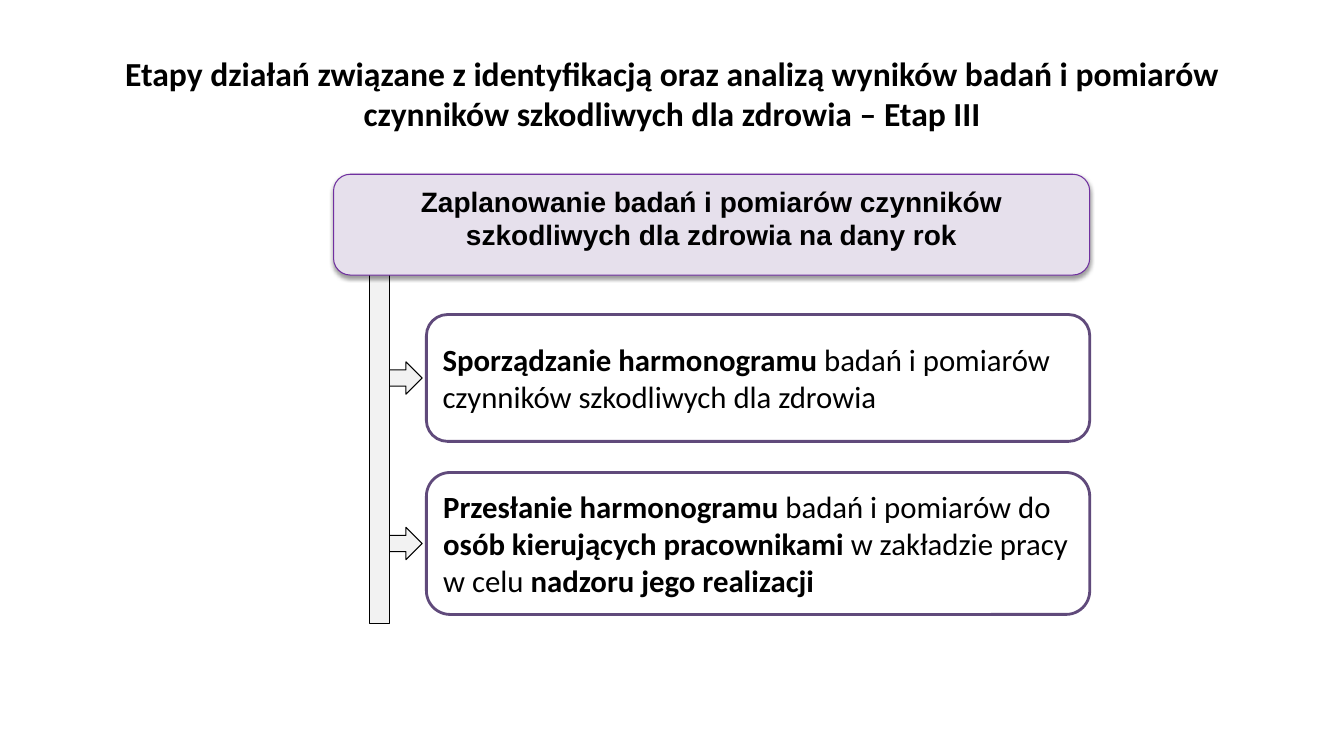
from collections import namedtuple
from dataclasses import dataclass

import lxml.etree
import pptx
import pptx.dml.color
import pptx.enum.shapes
import pptx.enum.text
import pptx.oxml.ns
import pptx.util

SHAPE = pptx.enum.shapes.MSO_SHAPE
ALIGN = pptx.enum.text.PP_ALIGN
ANCHOR = pptx.enum.text.MSO_ANCHOR

CELL = 7.5 / 18  # the slide is a grid of 32 columns and 18 rows
Box = namedtuple("Box", "x y w h")


@dataclass(frozen=True)
class Theme:
    text: str = "000000"
    paper: str = "FFFFFF"
    guide_fill: str = "F2F2F2"
    header_fill: str = "E6E0EC"
    header_line: str = "7030A0"
    step_line: str = "604A7B"
    body_font: str = "Calibri"
    header_font: str = "Arial"
    title_size: int = 24
    header_size: int = 20
    step_size: int = 22
    thin: float = 0.75
    thick: float = 2


THEME = Theme()
TITLE = ("Etapy działań związane z identyfikacją oraz analizą wyników badań "
         "i pomiarów czynników szkodliwych dla zdrowia – Etap III")
HEADER = "Zaplanowanie badań i pomiarów czynników szkodliwych dla zdrowia na dany rok"
# Each step: top and height in rows below the flow's top, then (text, bold) runs
STEPS = [
    (3.34, 3.02, [("Sporządzanie harmonogramu ", True),
                  ("badań i pomiarów czynników szkodliwych dla zdrowia", False)]),
    (7.1, 3.38, [("Przesłanie harmonogramu ", True),
                 ("badań i pomiarów do ", False),
                 ("osób kierujących pracownikami ", True),
                 ("w zakładzie pracy w celu ", False),
                 ("nadzoru jego realizacji", True)]),
]


def rgb(value):
    return pptx.dml.color.RGBColor.from_string(value)


def emu(box):
    return [pptx.util.Inches(cells * CELL) for cells in box]


def add_box(s, kind, box, fill, line, width):
    sp = s.shapes.add_shape(kind, *emu(box))
    sp.shadow.inherit = False
    sp.fill.solid()
    sp.fill.fore_color.rgb = rgb(fill)
    sp.line.color.rgb = rgb(line)
    sp.line.width = pptx.util.Pt(width)
    return sp


def write(sp, runs, font, size, align, anchor):
    tf = sp.text_frame
    tf.word_wrap = True
    tf.vertical_anchor = anchor
    p = tf.paragraphs[0]
    p.alignment = align
    for text, bold in runs:
        r = p.add_run()
        r.text = text
        formats = {"name": font, "size": pptx.util.Pt(size), "bold": bold}
        for name, value in formats.items():
            setattr(r.font, name, value)
        r.font.color.rgb = rgb(THEME.text)


def add_drop_shadow(sp):
    qn = pptx.oxml.ns.qn
    effects = sp._element.spPr.find(qn("a:effectLst"))
    shadow = lxml.etree.SubElement(
        effects, qn("a:outerShdw"), blurRad=str(pptx.util.Pt(3.1)),
        dist=str(pptx.util.Pt(1.6)), dir="5400000", rotWithShape="0")
    color = lxml.etree.SubElement(shadow, qn("a:srgbClr"), val=THEME.text)
    lxml.etree.SubElement(color, qn("a:alpha"), val="38000")


def add_title(s, box):
    sp = s.shapes.add_textbox(*emu(box))
    write(sp, [(TITLE, True)], THEME.body_font, THEME.title_size,
          ALIGN.CENTER, ANCHOR.MIDDLE)


def add_header(s, box):
    sp = add_box(s, SHAPE.ROUNDED_RECTANGLE, box, THEME.header_fill,
                 THEME.header_line, THEME.thin)
    add_drop_shadow(sp)
    write(sp, [(HEADER, True)], THEME.header_font, THEME.header_size,
          ALIGN.CENTER, ANCHOR.TOP)


def add_step(s, box, runs):
    sp = add_box(s, SHAPE.ROUNDED_RECTANGLE, box, THEME.paper,
                 THEME.step_line, THEME.thick)
    write(sp, runs, THEME.body_font, THEME.step_size, ALIGN.LEFT, ANCHOR.MIDDLE)


def add_flow(s, box):
    """Header with a rail below it and an arrow from the rail to each step."""
    guide = (THEME.guide_fill, THEME.text, THEME.thin)
    indent, arrow_w, arrow_h = 2.21, 0.86, 0.77
    for top, height, _ in STEPS:
        middle = box.y + top + height / 2
        arrow = Box(box.x + 1.25, middle - arrow_h / 2, arrow_w, arrow_h)
        add_box(s, SHAPE.RIGHT_ARROW, arrow, *guide)
    rail_top = 1.65
    rail = Box(box.x + 0.86, box.y + rail_top, 0.48, box.h - rail_top)
    add_box(s, SHAPE.RECTANGLE, rail, *guide)
    add_header(s, box._replace(h=2.4))
    for top, height, runs in STEPS:
        add_step(s, Box(box.x + indent, box.y + top, box.w - indent, height), runs)


def main():
    prs = pptx.Presentation()
    prs.slide_width = pptx.util.Inches(13.33)
    prs.slide_height = pptx.util.Inches(7.5)
    s = prs.slides.add_slide(prs.slide_layouts[6])
    add_flow(s, Box(7.94, 4.15, 18, 10.7))
    add_title(s, Box(1.6, 0.72, 28.8, 3))
    prs.save("out.pptx")


if __name__ == "__main__":
    main()
